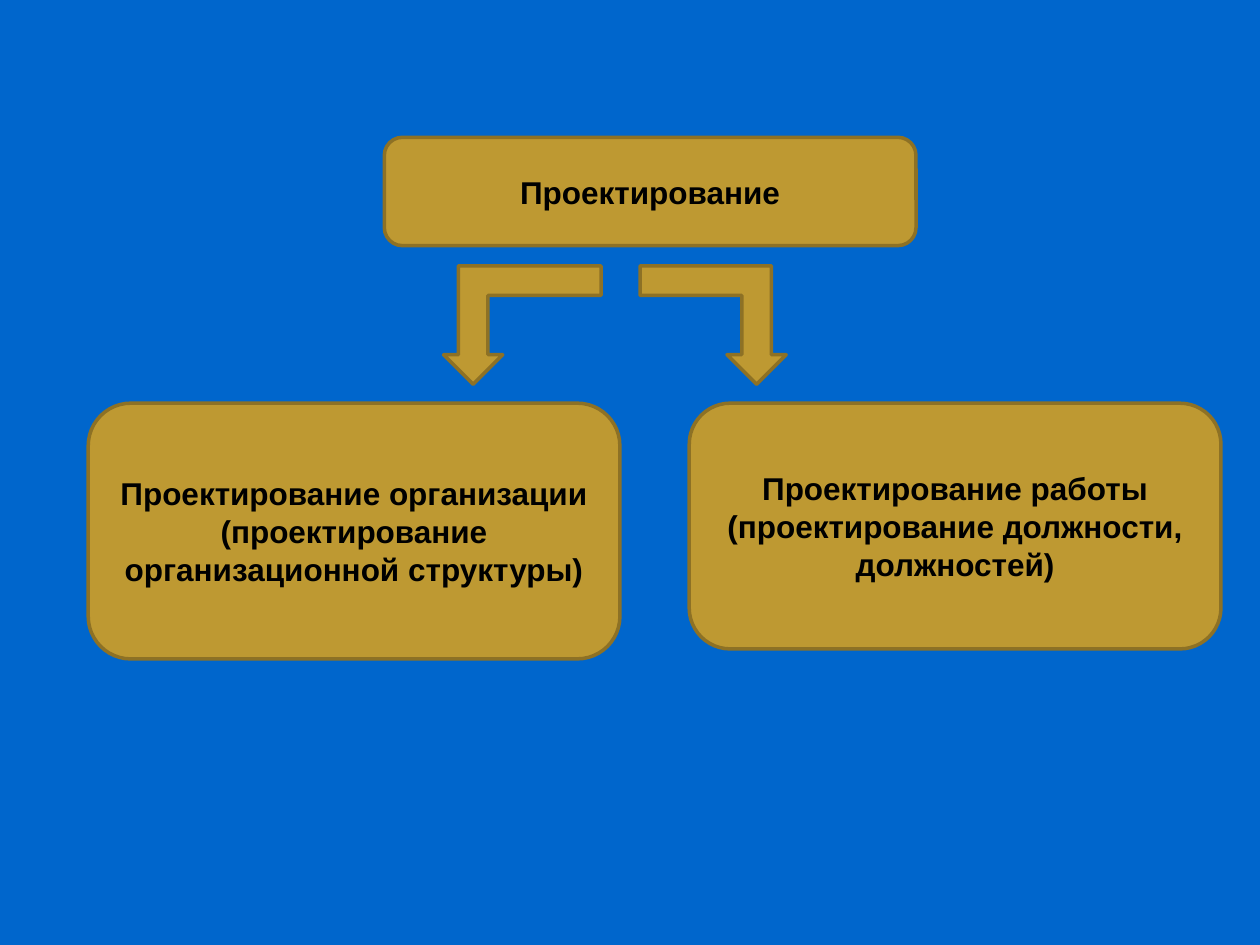
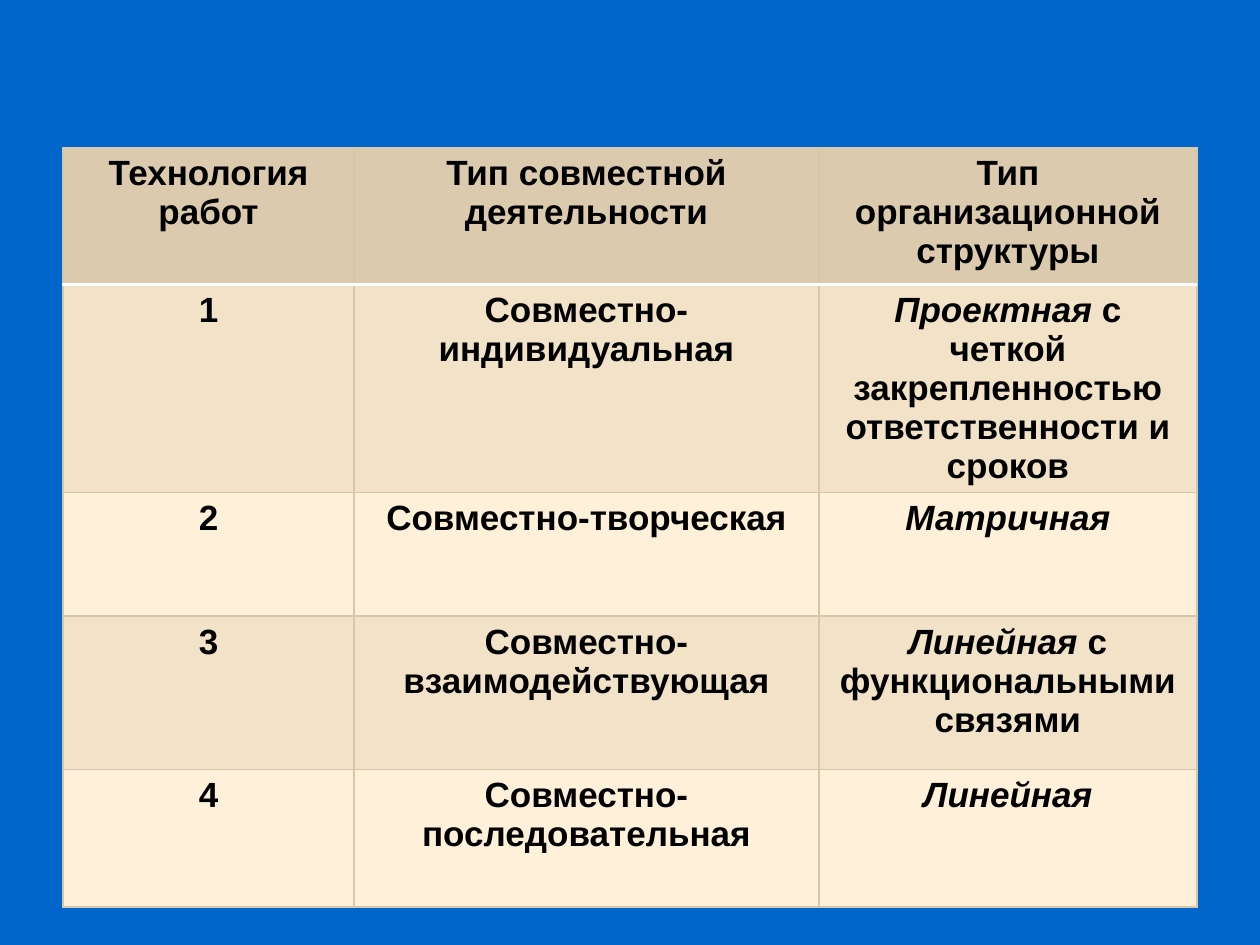
import pptx
import pptx.dml.color
import pptx.enum.shapes
import pptx.enum.text
import pptx.oxml
import pptx.oxml.ns
import pptx.util

COLOURS = {
    "background": "0066CC",
    "gold": "BE9932",
    "gold_line": "8D7125",
    "text": "000000",
    "header": "DBCAAD",
    "band_dark": "F1E2C8",
    "band_light": "FFF0D9",
    "grid": "D7C6A8",
    "header_rule": "FFFFFF",
}
FONT = "Arial"
WIDTH, HEIGHT = pptx.util.Inches(10), pptx.util.Inches(7.5)
COLUMN, ROW = WIDTH / 100, HEIGHT / 75  # layout grid: 100 columns by 75 rows

# Boxes are left, top, width, height in columns and rows
DIAGRAM_BOX = (7, 10.9, 89.9, 41.4)
TABLE_BOX = (5, 11.7, 90, 57.6)

TABLE_COLUMNS = (23.1, 36.9, 30)
TABLE_ROWS = (10.9, 13.8, 9.8, 12.2, 10.9)
# Asterisks enclose italic words
TABLE_TEXT = (
    ("Технология работ", "Тип совместной деятельности", "Тип организационной структуры"),
    ("1", "Совместно-индивидуальная",
     "*Проектная* с четкой закрепленностью ответственности и сроков"),
    ("2", "Совместно-творческая", "*Матричная*"),
    ("3", "Совместно-взаимодействующая", "*Линейная* с функциональными\nсвязями"),
    ("4", "Совместно-последовательная", "*Линейная*"),
)


def colour(name):
    return pptx.dml.color.RGBColor.from_string(COLOURS[name])


def fill_solid(fill, name):
    fill.solid()
    fill.fore_color.rgb = colour(name)


def place(box, left, top, width, height):
    """Turn a position inside a box into slide lengths."""
    return (round((box[0] + left) * COLUMN), round((box[1] + top) * ROW),
            round(width * COLUMN), round(height * ROW))


def write_text(text_frame, text, size):
    text_frame.word_wrap = True
    for number, line in enumerate(text.split("\n")):
        paragraph = text_frame.add_paragraph() if number else text_frame.paragraphs[0]
        paragraph.alignment = pptx.enum.text.PP_ALIGN.CENTER
        for index, part in enumerate(line.split("*")):
            if not part:
                continue
            run = paragraph.add_run()
            run.text = part
            run.font.name = FONT
            run.font.size = pptx.util.Pt(size)
            run.font.bold = True
            run.font.italic = index % 2 == 1
            run.font.color.rgb = colour("text")


def add_slide(presentation):
    slide = presentation.slides.add_slide(presentation.slide_layouts[6])
    fill_solid(slide.background.fill, "background")
    return slide


def add_gold_shape(slide, preset, position):
    shape = slide.shapes.add_shape(preset, *position)
    shape.shadow.inherit = False
    fill_solid(shape.fill, "gold")
    shape.line.color.rgb = colour("gold_line")
    shape.line.width = pptx.util.Pt(2)
    return shape


def add_card(slide, position, text):
    preset = pptx.enum.shapes.MSO_SHAPE.ROUNDED_RECTANGLE
    card = add_gold_shape(slide, preset, position)
    card.text_frame.vertical_anchor = pptx.enum.text.MSO_ANCHOR.MIDDLE
    write_text(card.text_frame, text, 18)


def add_bent_arrow(slide, position, points_right):
    preset = pptx.enum.shapes.MSO_SHAPE.BENT_UP_ARROW
    arrow = add_gold_shape(slide, preset, position)
    arrow.rotation = 180
    if points_right:
        transform = arrow._element.spPr.find(pptx.oxml.ns.qn("a:xfrm"))
        transform.set("flipH", "1")


def build_diagram(slide, box):
    card_width, branch_top = 42.2, 21.1
    # Root and its two branches
    add_card(slide, place(box, 23.5, 0, card_width, 8.6), "Проектирование")
    add_card(slide, place(box, box[2] - card_width, branch_top, card_width, 19.5),
             "Проектирование работы\n(проектирование должности, должностей)")
    add_card(slide, place(box, 0, branch_top, card_width, 20.3),
             "Проектирование организации\n(проектирование организационной структуры)")
    # Arrows from the root to the branches
    for left, width, points_right in ((28.2, 12.5, False), (43.8, 11.6, True)):
        add_bent_arrow(slide, place(box, left, 10.2, width, 9.4), points_right)


def set_borders(cell, borders):
    """Borders are (side, colour name, points), in the order L, R, T, B."""
    properties = cell._tc.get_or_add_tcPr()
    for index, (side, name, points) in enumerate(borders):
        properties.insert(index, pptx.oxml.parse_xml(
            f'<a:ln{side} {pptx.oxml.ns.nsdecls("a")} w="{pptx.util.Pt(points)}">'
            f'<a:solidFill><a:srgbClr val="{COLOURS[name]}"/></a:solidFill></a:ln{side}>'))


def build_table(slide, box):
    frame = slide.shapes.add_table(len(TABLE_ROWS), len(TABLE_COLUMNS),
                                   *place(box, 0, 0, box[2], box[3]))
    table = frame.table
    table.first_row = table.horz_banding = False
    for column, width in zip(table.columns, TABLE_COLUMNS):
        column.width = round(width * COLUMN)
    for row, height in zip(table.rows, TABLE_ROWS):
        row.height = round(height * ROW)

    grid, rule = ("grid", 0.75), ("header_rule", 2)
    for row_number, texts in enumerate(TABLE_TEXT):
        band = "band_dark" if row_number % 2 else "band_light"
        for column_number, text in enumerate(texts):
            cell = table.cell(row_number, column_number)
            write_text(cell.text_frame, text, 20)
            fill_solid(cell.fill, band if row_number else "header")
            top = rule if row_number == 1 else grid
            bottom = grid if row_number else rule
            set_borders(cell, (("L", *grid), ("R", *grid), ("T", *top), ("B", *bottom)))


def main():
    presentation = pptx.Presentation()
    presentation.slide_width, presentation.slide_height = WIDTH, HEIGHT
    build_diagram(add_slide(presentation), DIAGRAM_BOX)
    build_table(add_slide(presentation), TABLE_BOX)
    presentation.save("out.pptx")


if __name__ == "__main__":
    main()
